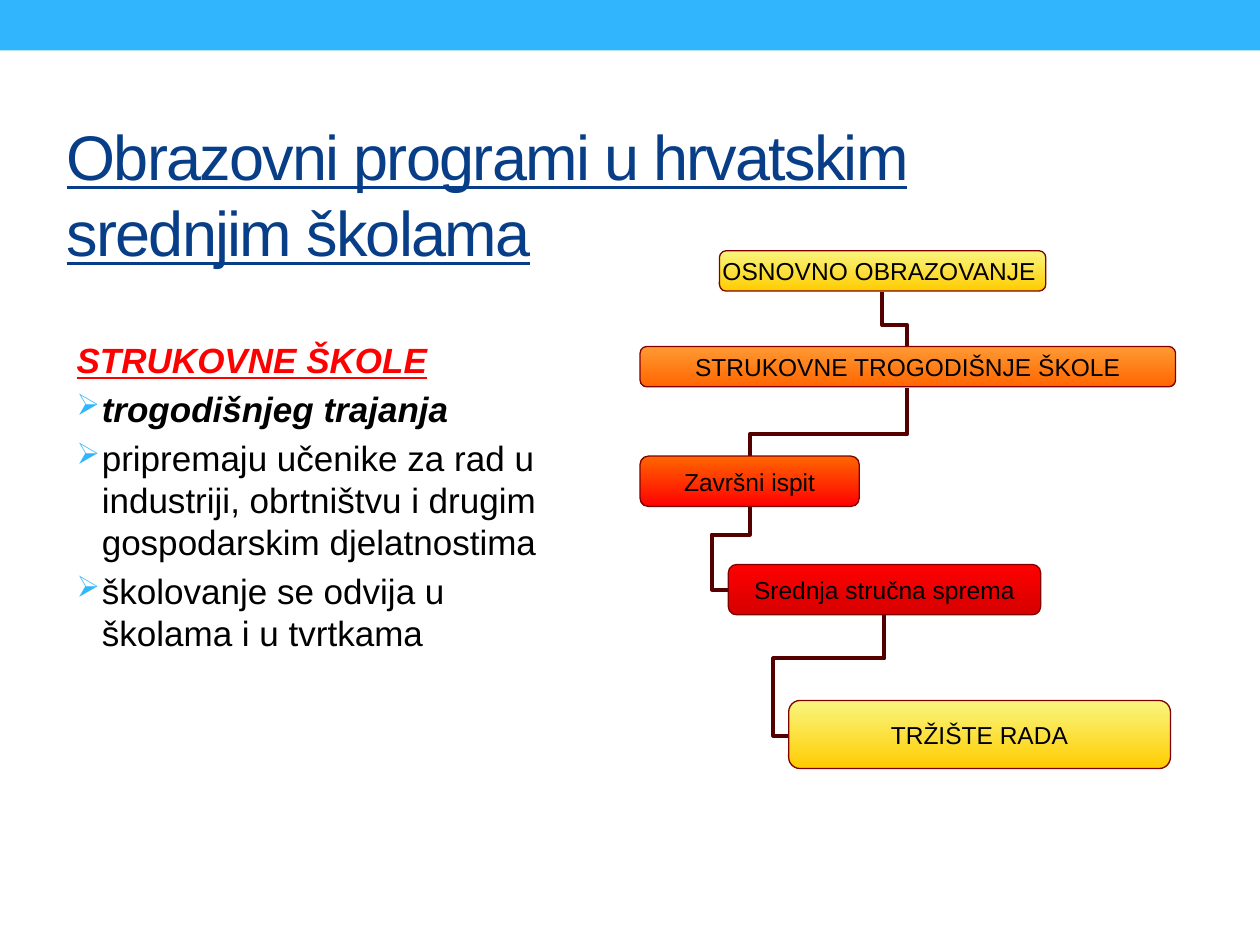
from typing import NamedTuple

from lxml.etree import SubElement
from pptx import Presentation
from pptx.dml.color import RGBColor
from pptx.enum.shapes import MSO_CONNECTOR as Link, MSO_SHAPE as Shape
from pptx.enum.text import MSO_ANCHOR as Anchor, PP_ALIGN as Align
from pptx.oxml.ns import qn
from pptx.util import Inches, Pt


class Stage(NamedTuple):
    label: str
    left: float
    top: float
    width: float
    height: float
    light: str
    dark: str
    inset: float


class Elbow(NamedTuple):
    begin: tuple[float, float]
    end: tuple[float, float]
    bends: tuple[float, ...]


class Point(NamedTuple):
    text: str
    color: str = "000000"
    bold: bool = False
    italic: bool = False
    underline: bool = False
    bullet: bool = True


STAGES = [
    Stage("OSNOVNO OBRAZOVANJE ", 5.71, 1.99, 2.59, 0.32, "F9F67F", "FFCC00", 0.05),
    Stage("STRUKOVNE TROGODIŠNJE ŠKOLE", 5.08, 2.75, 4.25, 0.32, "FF9933", "FF6600", 0.05),
    Stage("Završni ispit", 5.08, 3.62, 1.74, 0.4, "FF6600", "FF0000", 0.06),
    Stage("Srednja stručna sprema", 5.78, 4.48, 2.48, 0.4, "FF0000", "D60000", 0.06),
    Stage("TRŽIŠTE RADA", 6.26, 5.56, 3.03, 0.54, "F9F67F", "FFCC00", 0.07),
]
ELBOWS = [
    Elbow((6.26, 5.84), (7.02, 4.88), (-0.16, 0.64)),
    Elbow((5.78, 4.68), (5.95, 4.01), (-0.77, 0.65)),
    Elbow((5.95, 3.62), (7.2, 3.08), (0.32,)),
    Elbow((7.2, 2.75), (7, 2.32), (0.4,)),
]
POINTS = [
    Point("STRUKOVNE ŠKOLE", "FF0000", True, True, True, False),
    Point("trogodišnjeg trajanja", bold=True, italic=True),
    Point("pripremaju učenike za rad u industriji, obrtništvu i drugim gospodarskim djelatnostima"),
    Point("školovanje se odvija u školama i u tvrtkama"),
]


def paint(target, color: str) -> None:
    target.rgb = RGBColor.from_string(color)


def add_run(paragraph, text: str, size: float, color: str):
    run = paragraph.add_run()
    run.text = text
    run.font.name = "Arial"
    run.font.size = Pt(size)
    paint(run.font.color, color)
    return run


def add_text_frame(slide, left: float, top: float, width: float, height: float):
    frame = slide.shapes.add_textbox(*map(Inches, (left, top, width, height))).text_frame
    frame.word_wrap = True
    return frame


def draw_band(slide) -> None:
    band = slide.shapes.add_shape(Shape.RECTANGLE, 0, 0, Inches(10), Inches(0.4))
    band.shadow.inherit = False
    band.fill.solid()
    paint(band.fill.fore_color, "31B6FD")
    band.line.fill.background()


def draw_title(slide) -> None:
    frame = add_text_frame(slide, 0.43, 0.91, 8.67, 1.25)
    frame.vertical_anchor = Anchor.MIDDLE
    title = add_run(frame.paragraphs[0], "Obrazovni programi u hrvatskim srednjim školama", 36, "073E87")
    title.font.underline = True
    title.font._element.set("spc", "-100")


def draw_points(slide, points: list[Point]) -> None:
    frame = add_text_frame(slide, 0.51, 2.64, 4.16, 4.07)
    for index, point in enumerate(points):
        paragraph = frame.add_paragraph() if index else frame.paragraphs[0]
        paragraph.space_before = Pt(4)
        props = paragraph._p.get_or_add_pPr()
        props.set("marL", str(Inches(0.2)))
        props.set("indent", str(Inches(-0.2)))
        if point.bullet:
            tint = SubElement(props, qn("a:buClr"))
            SubElement(tint, qn("a:srgbClr"), val="31B6FD")
            SubElement(props, qn("a:buSzPct"), val="85000")
            SubElement(props, qn("a:buChar"), char="➢")
        else:
            SubElement(props, qn("a:buNone"))
        font = add_run(paragraph, point.text, 20, point.color).font
        font.bold, font.italic, font.underline = point.bold, point.italic, point.underline


def draw_elbow(slide, elbow: Elbow) -> None:
    (x1, y1), (x2, y2) = elbow.begin, elbow.end
    upright = len(elbow.bends) == 1
    if upright:
        mid_x, mid_y = (x1 + x2) / 2, (y1 + y2) / 2
        half_x, half_y = (x1 - x2) / 2, (y1 - y2) / 2
        x1, y1 = mid_x - half_y, mid_y + half_x
        x2, y2 = mid_x + half_y, mid_y - half_x
    link = slide.shapes.add_connector(Link.ELBOW, *map(Inches, (x1, y1, x2, y2)))
    paint(link.line.color, "540000")
    link.line.width = Pt(2.25)
    props = link._element.spPr
    SubElement(props, qn("a:effectLst"))
    if upright:
        props.find(qn("a:xfrm")).set("rot", str(270 * 60000))
    geometry = props.find(qn("a:prstGeom"))
    geometry.set("prst", f"bentConnector{len(elbow.bends) + 2}")
    guides = geometry.find(qn("a:avLst"))
    for number, bend in enumerate(elbow.bends, 1):
        SubElement(guides, qn("a:gd"), name=f"adj{number}", fmla=f"val {round(bend * 100000)}")


def draw_stage(slide, stage: Stage) -> None:
    box = slide.shapes.add_shape(Shape.ROUNDED_RECTANGLE, *map(Inches, stage[1:5]))
    box.shadow.inherit = False
    box.fill.gradient()
    box.fill.gradient_angle = 270
    for stop, color in zip(box.fill.gradient_stops, (stage.light, stage.dark)):
        paint(stop.color, color)
    paint(box.line.color, "800000")
    box.line.width = Pt(0.75)
    frame = box.text_frame
    frame.word_wrap = False
    frame.vertical_anchor = Anchor.MIDDLE
    frame.margin_left = frame.margin_right = Inches(stage.inset)
    frame.margin_top = frame.margin_bottom = Inches(stage.inset - 0.03)
    frame.paragraphs[0].alignment = Align.CENTER
    add_run(frame.paragraphs[0], stage.label, 14, "000000")


def main() -> None:
    deck = Presentation()
    deck.slide_width, deck.slide_height = Inches(10), Inches(7.5)
    slide = deck.slides.add_slide(deck.slide_layouts[6])
    draw_band(slide)
    draw_title(slide)
    draw_points(slide, POINTS)
    for elbow in ELBOWS:
        draw_elbow(slide, elbow)
    for stage in STAGES:
        draw_stage(slide, stage)
    deck.save("out.pptx")


if __name__ == "__main__":
    main()
